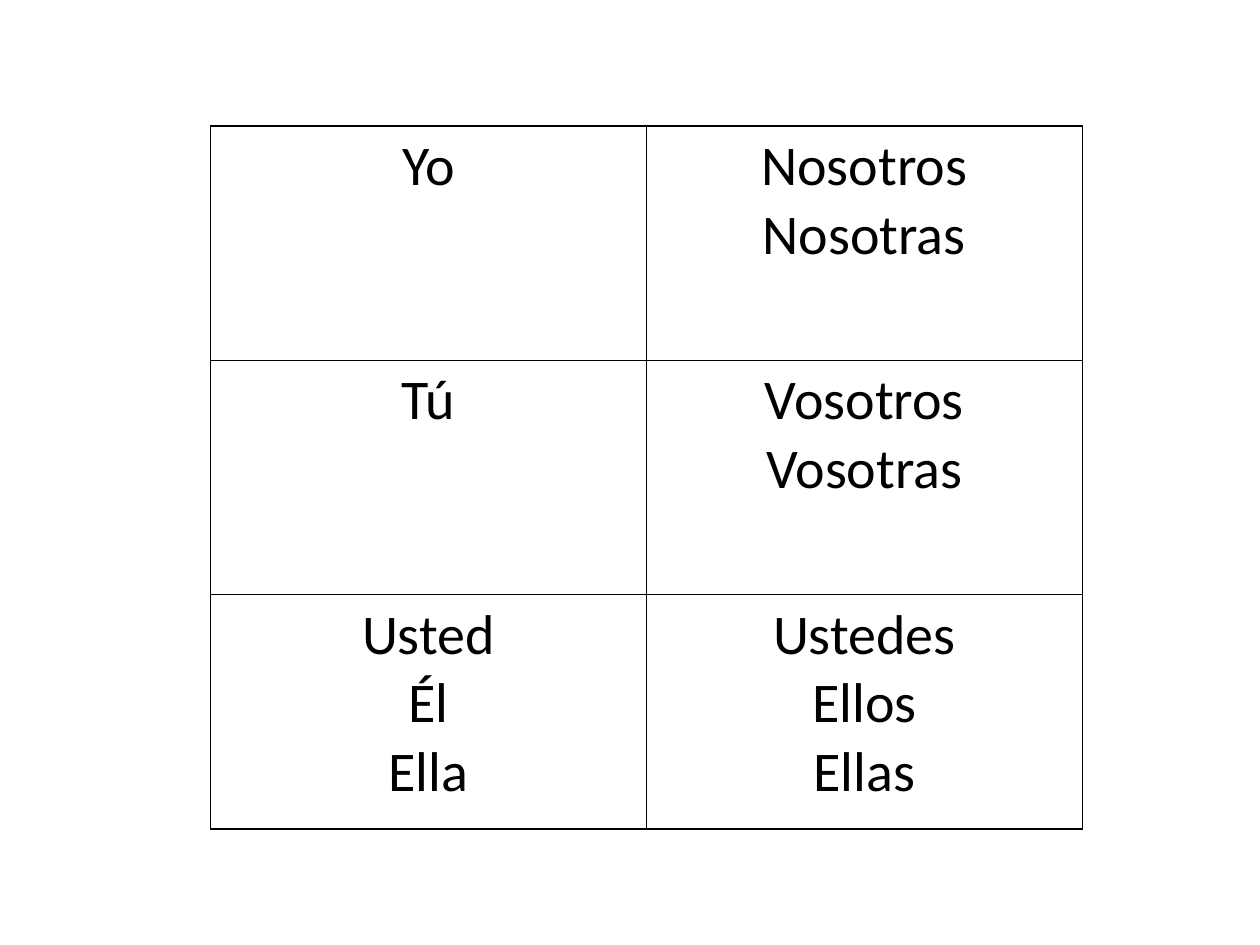
from dataclasses import dataclass

from lxml import etree
from pptx import Presentation
from pptx.dml.color import RGBColor
from pptx.enum import text
from pptx.oxml.ns import qn
from pptx.util import Inches, Pt


@dataclass(frozen=True)
class Theme:
    font: str = "Calibri"
    size: float = 32
    ink: str = "000000"
    paper: str = "FFFFFF"
    border: float = 0.75


THEME = Theme()

# Singular and plural pronouns, one row for each person
PRONOUNS = [
    (["Yo"], ["Nosotros", "Nosotras"]),
    (["Tú"], ["Vosotros", "Vosotras"]),
    (["Usted", "Él", "Ella"], ["Ustedes", "Ellos", "Ellas"]),
]


def write_text(tf, lines, font=THEME.font, size=THEME.size, color=THEME.ink,
               align=text.PP_ALIGN.CENTER):
    """Write one paragraph for each line."""
    for i, line in enumerate(lines):
        p = tf.paragraphs[0] if i == 0 else tf.add_paragraph()
        p.alignment = align
        r = p.add_run()
        r.text = line
        r.font.name = font
        r.font.size = Pt(size)
        r.font.color.rgb = RGBColor.from_string(color)


def add_borders(cell, color=THEME.ink, width=THEME.border):
    """Draw a solid line on all four sides of a cell."""
    props = cell._tc.get_or_add_tcPr()
    for i, side in enumerate(("lnL", "lnR", "lnT", "lnB")):
        line = etree.Element(qn(f"a:{side}"), w=str(Pt(width)))
        fill = etree.SubElement(line, qn("a:solidFill"))
        etree.SubElement(fill, qn("a:srgbClr"), val=color)
        props.insert(i, line)


def add_pronoun_table(s, left, top, width, height):
    n_rows, n_cols = len(PRONOUNS), len(PRONOUNS[0])
    table = s.shapes.add_table(n_rows, n_cols, left, top, width, height).table
    table.first_row = table.horz_banding = False
    for i, row in enumerate(PRONOUNS):
        for j, lines in enumerate(row):
            cell = table.cell(i, j)
            cell.fill.solid()
            cell.fill.fore_color.rgb = RGBColor.from_string(THEME.paper)
            add_borders(cell)
            write_text(cell.text_frame, lines)


def main():
    prs = Presentation()
    prs.slide_width, prs.slide_height = Inches(10), Inches(7.5)
    s = prs.slides.add_slide(prs.slide_layouts[6])
    add_pronoun_table(s, Inches(1.67), Inches(1), Inches(6.92), Inches(5.58))
    prs.save("out.pptx")


if __name__ == "__main__":
    main()
